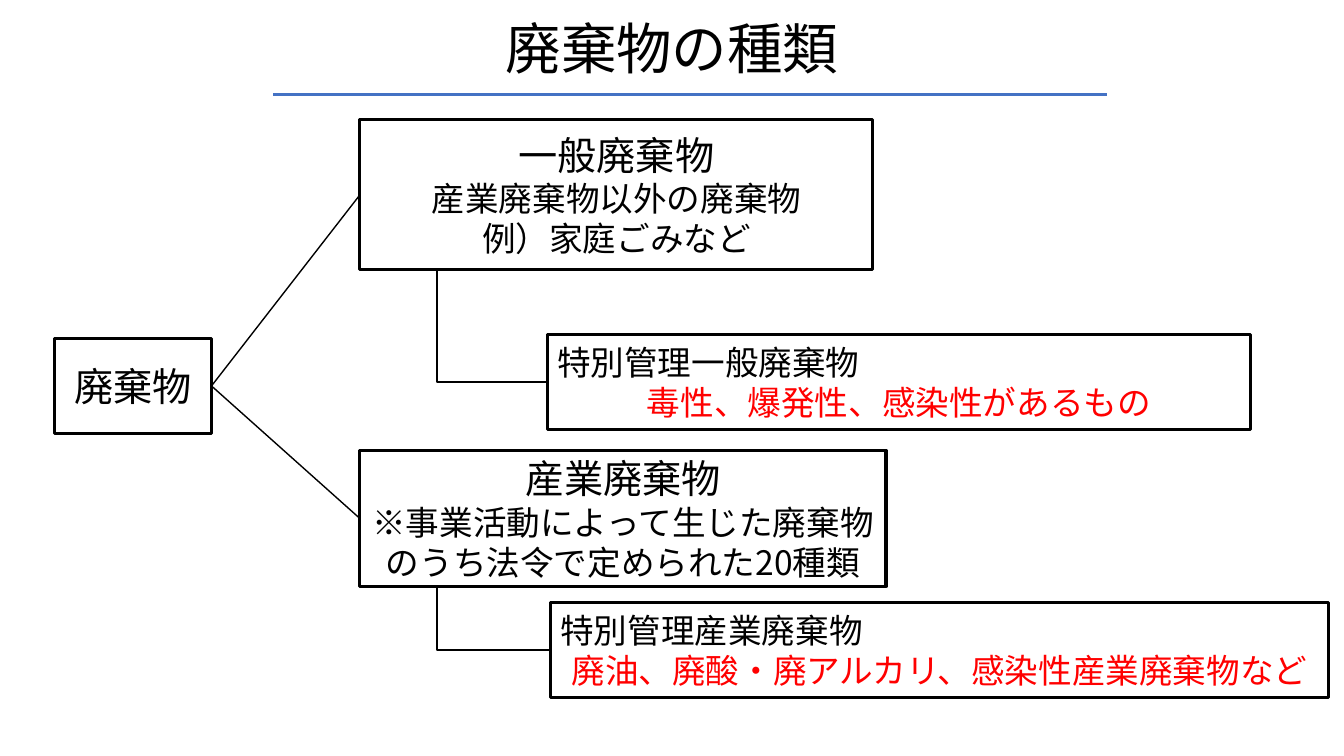
import pptx
import pptx.util
import pptx.dml.color
import pptx.enum.shapes
import pptx.enum.text
import pptx.oxml
import pptx.oxml.ns

Cm = pptx.util.Cm
Pt = pptx.util.Pt
ALIGN = pptx.enum.text.PP_ALIGN
CONNECTOR = pptx.enum.shapes.MSO_CONNECTOR
FONT = "Noto Sans CJK JP"
COLORS = {"ink": "000000", "warning": "FF0000", "rule": "4472C4"}


def rgb(name):
    """Return the named colour."""
    return pptx.dml.color.RGBColor.from_string(COLORS[name])


def apply_format(target, values):
    """Set each attribute in values on target."""
    for name, value in values.items():
        setattr(target, name, value)


def write_text(frame, lines):
    """Write (text, size, colour, alignment) lines as paragraphs."""
    apply_format(frame, {
        "word_wrap": True,
        "auto_size": pptx.enum.text.MSO_AUTO_SIZE.NONE,
        "vertical_anchor": pptx.enum.text.MSO_ANCHOR.MIDDLE,
    })
    for index, (text, size, color, alignment) in enumerate(lines):
        para = frame.paragraphs[0] if index == 0 else frame.add_paragraph()
        para.alignment = alignment
        span = para.add_run()
        span.text = text
        apply_format(span.font, {"name": FONT, "size": Pt(size)})
        span.font.color.rgb = rgb(color)
        east_asian = pptx.oxml.parse_xml(
            f'<a:ea {pptx.oxml.ns.nsdecls("a")} typeface="{FONT}"/>')
        span.font._element.find(pptx.oxml.ns.qn("a:latin")).addnext(east_asian)


def add_line(page, kind, start, end, color, width):
    """Draw a connector without shadow between two points."""
    line = page.shapes.add_connector(kind, *start, *end)
    line.line.color.rgb = rgb(color)
    line.line.width = Pt(width)
    line._element.spPr.append(pptx.oxml.parse_xml(
        f'<a:effectLst {pptx.oxml.ns.nsdecls("a")}/>'))
    return line


def add_heading(page, left, top, width, height):
    """Place the title and the rule beneath it."""
    title = page.shapes.title
    apply_format(title, {"left": Cm(left), "top": Cm(top),
                         "width": Cm(width), "height": Cm(height)})
    write_text(title.text_frame, [("廃棄物の種類", 39.6, "ink", ALIGN.CENTER)])
    title.text_frame.paragraphs[0].line_spacing = 0.9
    rule_y = Cm(top + height + 0.13)
    add_line(page, CONNECTOR.STRAIGHT, (Cm(left + 4.55), rule_y),
             (Cm(left + 25.56), rule_y), "rule", 2.25)


def add_box(page, left, top, width, height, lines):
    """Place an outlined box with text."""
    box = page.shapes.add_shape(pptx.enum.shapes.MSO_SHAPE.RECTANGLE,
                                Cm(left), Cm(top), Cm(width), Cm(height))
    box.shadow.inherit = False
    box.fill.background()
    box.line.color.rgb = rgb("ink")
    box.line.width = Pt(2.25)
    write_text(box.text_frame, lines)
    return box


def add_category(page, left, top, width, height, name, details):
    """Place a category box with a large name and smaller details."""
    lines = [(name, 28, "ink", ALIGN.CENTER)]
    lines += [(detail, 24, "ink", ALIGN.CENTER) for detail in details]
    return add_box(page, left, top, width, height, lines)


def add_special(page, left, top, width, name, examples):
    """Place a specially controlled waste box with red examples."""
    return add_box(page, left, top, width, 2.39, [
        (name, 24, "ink", ALIGN.LEFT),
        (examples, 24, "warning", ALIGN.CENTER),
    ])


def add_branch(page, parent, child):
    """Join the right side of parent to the left side of child."""
    line = add_line(page, CONNECTOR.STRAIGHT, (0, 0), (0, 0), "ink", 1)
    line.begin_connect(parent, 3)
    line.end_connect(child, 1)


def add_elbow(page, parent, child):
    """Drop from the bottom of parent and turn right into child."""
    start_x = parent.left + Cm(1.95)
    start_y = parent.top + parent.height
    run = child.left - start_x
    drop = child.top + child.height // 2 - start_y
    left = start_x + (run - drop) // 2
    top = start_y + (drop - run) // 2
    elbow = add_line(page, CONNECTOR.ELBOW, (left + drop, top),
                     (left, top + run), "ink", 1.5)
    properties = elbow._element.spPr
    properties.find(pptx.oxml.ns.qn("a:xfrm")).set("rot", "16200000")
    properties.find(pptx.oxml.ns.qn("a:prstGeom")).set("prst", "bentConnector2")


def add_waste_tree(page, left, top):
    """Place the tree of waste types from its upper left corner."""
    category_left = left + 7.7
    root = add_category(page, left, top + 5.51, 3.96, 2.39, "廃棄物", [])
    general = add_category(page, category_left, top, 12.93, 3.78, "一般廃棄物",
                           ["産業廃棄物以外の廃棄物", "例）家庭ごみなど"])
    industrial = add_category(
        page, category_left, top + 8.33, 13.26, 3.43, "産業廃棄物",
        ["※事業活動によって生じた廃棄物のうち法令で定められた20種類"])
    special_general = add_special(
        page, left + 12.42, top + 5.41, 17.73,
        "特別管理一般廃棄物", "毒性、爆発性、感染性があるもの")
    special_industrial = add_special(
        page, left + 12.5, top + 12.17, 19.61,
        "特別管理産業廃棄物", "廃油、廃酸・廃アルカリ、感染性産業廃棄物など")
    for category, special in ((general, special_general),
                              (industrial, special_industrial)):
        add_branch(page, root, category)
        add_elbow(page, category, special)


def main():
    """Build and save the deck."""
    deck = pptx.Presentation()
    apply_format(deck, {"slide_width": Cm(33.87), "slide_height": Cm(19.05)})
    page = deck.slides.add_slide(deck.slide_layouts[5])
    add_heading(page, 2.33, 0.33, 29.21, 1.93)
    add_waste_tree(page, 1.37, 3.02)
    deck.save("out.pptx")


if __name__ == "__main__":
    main()
